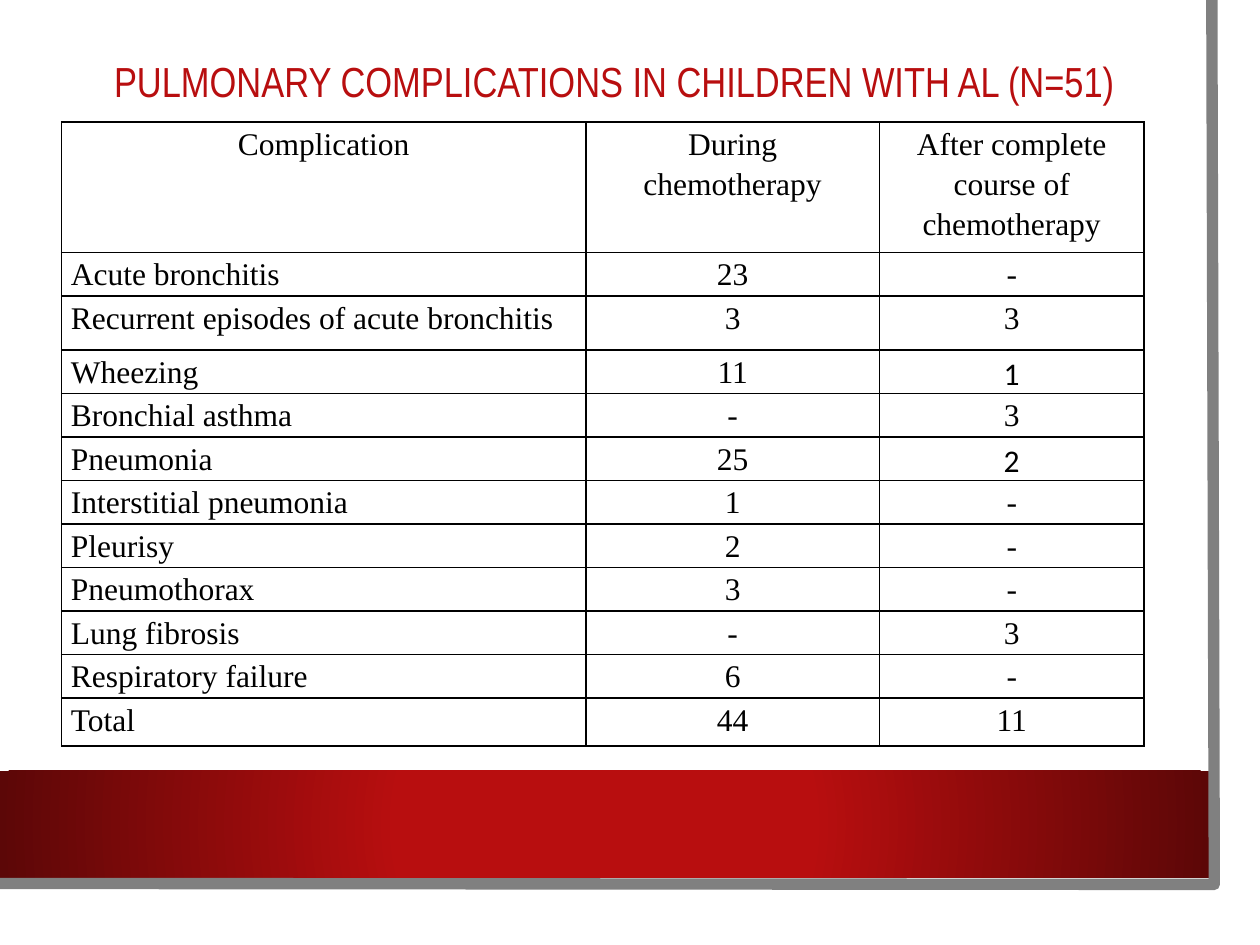
from pptx import Presentation
from pptx.dml.color import RGBColor
from pptx.enum.shapes import MSO_SHAPE
from pptx.enum.text import MSO_ANCHOR, PP_ALIGN
from pptx.oxml import parse_xml
from pptx.oxml.ns import nsdecls
from pptx.util import Cm, Pt

RECT = MSO_SHAPE.RECTANGLE
MIDDLE = MSO_ANCHOR.MIDDLE
CENTER, JUSTIFY = PP_ALIGN.CENTER, PP_ALIGN.JUSTIFY

WHITE = RGBColor(0xFF, 0xFF, 0xFF)
BLACK = RGBColor(0, 0, 0)
GRAY = RGBColor(0x80, 0x80, 0x80)
RED = RGBColor(0xB8, 0x0E, 0x0F)
DARK = RGBColor(0x5C, 0x07, 0x07)

SERIF, SANS, NARROW = "Times New Roman", "Calibri", "Arial Narrow"

TITLE = "PULMONARY COMPLICATIONS IN CHILDREN WITH AL (N=51)"
ROWS = [
    ("Complication", "During chemotherapy", "After complete course of chemotherapy"),
    ("Acute bronchitis", "23", "-"),
    ("Recurrent episodes of acute bronchitis", "3", "3"),
    ("Wheezing", "11", "1"),
    ("Bronchial asthma", "-", "3"),
    ("Pneumonia", "25", "2"),
    ("Interstitial pneumonia", "1", "-"),
    ("Pleurisy", "2", "-"),
    ("Pneumothorax", "3", "-"),
    ("Lung fibrosis", "-", "3"),
    ("Respiratory failure", "6", "-"),
    ("Total", "44", "11"),
]
WIDTHS = (10.57, 5.92, 5.33)
HEIGHTS = {0: 2.46, 2: 1.09, 11: 0.97}
ROW_HEIGHT = 0.81
SANS_CELLS = {(3, 2), (5, 2)}


def add_run(para, text, font, size, color):
    run = para.add_run()
    run.text = text
    run.font.name = font
    run.font.size = Pt(size)
    run.font.color.rgb = color


def add_rect(slide, left, top, width, height):
    rect = slide.shapes.add_shape(RECT, Cm(left), Cm(top), Cm(width), Cm(height))
    rect.shadow.inherit = False
    rect.line.fill.background()
    return rect


def fill_radial(shape, inner, outer, start):
    shape.fill.gradient()
    props = shape._element.spPr
    old = props.find("{*}gradFill")
    new = parse_xml(
        f'<a:gradFill {nsdecls("a")} rotWithShape="1"><a:gsLst>'
        f'<a:gs pos="{start * 1000}"><a:srgbClr val="{inner}"/></a:gs>'
        f'<a:gs pos="100000"><a:srgbClr val="{outer}"/></a:gs></a:gsLst>'
        '<a:path path="circle"><a:fillToRect l="50000" t="50000" r="50000" b="50000"/>'
        '</a:path></a:gradFill>'
    )
    props.replace(old, new)


def add_frame(slide, left, top, width, height):
    page = add_rect(slide, left, top, width + 0.58, height + 0.64)
    page.fill.solid()
    page.fill.fore_color.rgb = WHITE

    band = add_rect(slide, left, top + 15.54, width, 2.16)
    fill_radial(band, RED, DARK, 34)

    path = slide.shapes.build_freeform(Cm(left + width + 0.05), Cm(top))
    path.add_line_segments(
        [
            (Cm(left + width + 0.1), Cm(top + height)),
            (Cm(left - 0.05), Cm(top + height - 0.02)),
        ],
        close=False,
    )
    edge = path.convert_to_shape()
    edge.shadow.inherit = False
    edge.fill.background()
    edge.line.color.rgb = GRAY
    edge.line.width = Pt(6.5)


def add_title(slide, left, top, width, height):
    box = slide.shapes.add_textbox(Cm(left), Cm(top), Cm(width), Cm(height))
    frame = box.text_frame
    frame.word_wrap = True
    frame.vertical_anchor = MIDDLE
    para = frame.paragraphs[0]
    para.alignment = CENTER
    para.line_spacing = 0.9
    add_run(para, TITLE, NARROW, 24, RED)


def style_cell(cell):
    cell.margin_left = cell.margin_right = Cm(0.19)
    cell.margin_top = cell.margin_bottom = 0
    props = cell._tc.get_or_add_tcPr()
    for side in ("lnL", "lnR", "lnT", "lnB"):
        props.append(parse_xml(
            f'<a:{side} {nsdecls("a")} w="{Pt(1)}"><a:solidFill>'
            f'<a:srgbClr val="{BLACK}"/></a:solidFill></a:{side}>'
        ))
    cell.fill.background()


def add_grid(slide, left, top):
    tall = [HEIGHTS.get(i, ROW_HEIGHT) for i in range(len(ROWS))]
    table = slide.shapes.add_table(
        len(ROWS), len(WIDTHS), Cm(left), Cm(top), Cm(sum(WIDTHS)), Cm(sum(tall))
    ).table
    for col, width in zip(table.columns, WIDTHS):
        col.width = Cm(width)
    for i, texts in enumerate(ROWS):
        table.rows[i].height = Cm(tall[i])
        for j, text in enumerate(texts):
            cell = table.cell(i, j)
            style_cell(cell)
            para = cell.text_frame.paragraphs[0]
            para.alignment = JUSTIFY if i and not j else CENTER
            para.line_spacing = 1.15
            font = SANS if (i, j) in SANS_CELLS else SERIF
            add_run(para, text, font, 18, BLACK)


def main():
    deck = Presentation()
    deck.slide_width, deck.slide_height = Cm(25.4), Cm(19.05)
    slide = deck.slides.add_slide(deck.slide_layouts[6])
    add_frame(slide, 0, 0, 24.38, 17.83)
    add_title(slide, 1.68, 0, 21.41, 3.4)
    add_grid(slide, 1.24, 2.46)
    deck.save("out.pptx")


if __name__ == "__main__":
    main()
